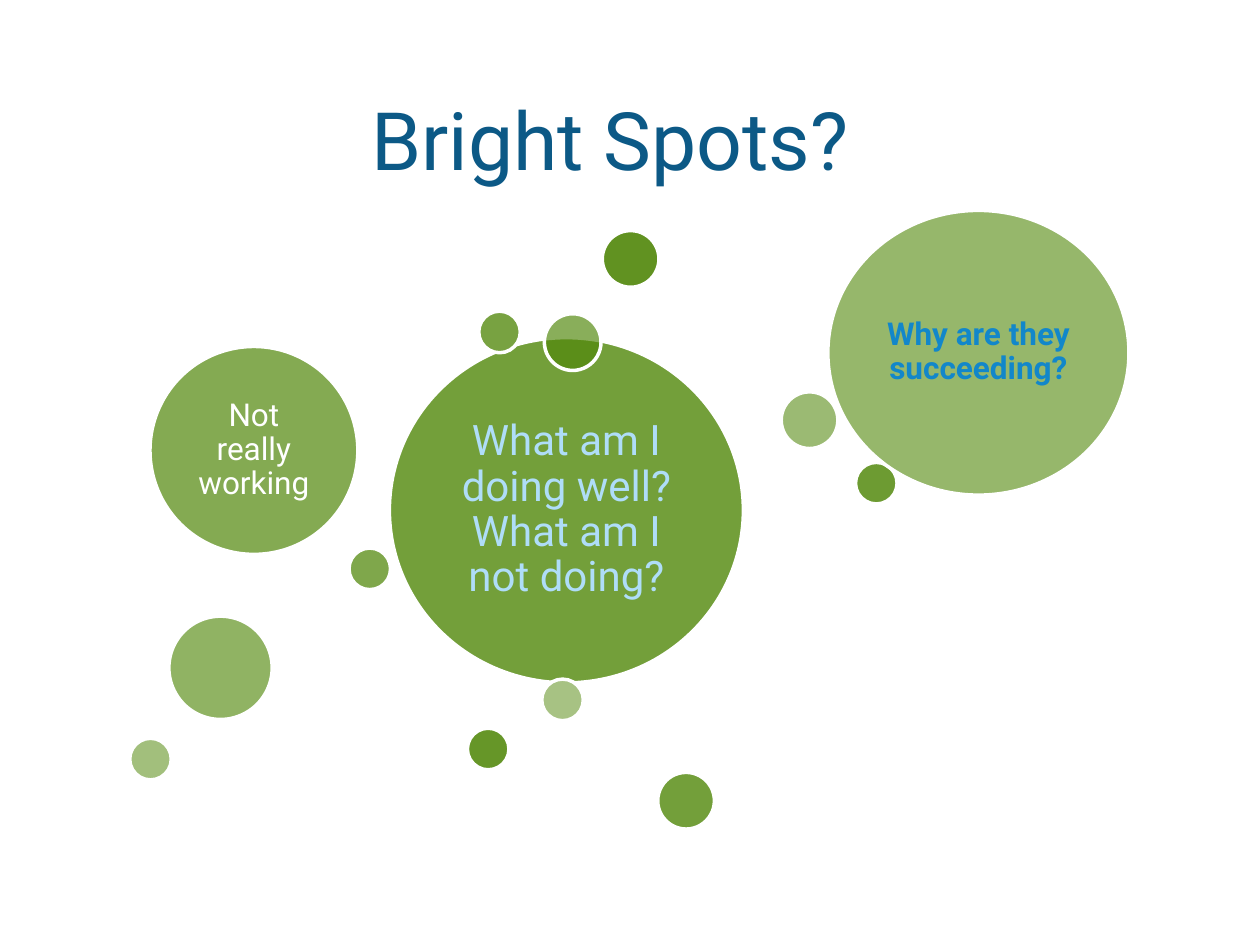
from lxml.etree import SubElement
from pptx import Presentation
from pptx.dml.color import RGBColor
from pptx.enum.shapes import MSO_SHAPE
from pptx.enum.text import MSO_ANCHOR, MSO_AUTO_SIZE, PP_ALIGN
from pptx.oxml.ns import qn
from pptx.util import Inches, Pt

FONT = "Roboto"
GREEN, WHITE = "508709", "FFFFFF"
TITLE_BLUE, PALE_BLUE, BRIGHT_BLUE = "0C5986", "AFDDF8", "1287CA"
SMALL, MEDIUM, LARGE = 0.33, 0.45, 0.82

# Left, top, width, height; opacity falls evenly along the list
BUBBLES = [
    (4.78, 1.83, MEDIUM, MEDIUM),
    (3.71, 5.78, SMALL, SMALL),
    (6.79, 3.67, SMALL, SMALL),
    (5.22, 6.13, MEDIUM, MEDIUM),
    (3.8, 2.47, SMALL, SMALL),
    (2.77, 4.35, SMALL, SMALL),
    (1.19, 2.75, 1.65, 1.65),
    (4.32, 2.49, MEDIUM, MEDIUM),
    (1.34, 4.89, LARGE, LARGE),
    (6.57, 1.67, 2.39, 2.26),
    (6.2, 3.11, MEDIUM, MEDIUM),
    (1.03, 5.86, SMALL, SMALL),
    (4.3, 5.39, SMALL, SMALL),
]
MAX_OPACITY, MIN_OPACITY = 90, 50

# Text and format by bubble index
LABELS = {
    6: dict(text="Not really working", color=WHITE),
    9: dict(text="Why are they succeeding?", color=BRIGHT_BLUE, bold=True),
}


def rgb(color):
    return RGBColor.from_string(color)


def write(shape, text, size=18, color=WHITE, bold=False, inset=0.07,
          right=None, anchor=MSO_ANCHOR.MIDDLE, spacing=0.9):
    tf = shape.text_frame
    tf.word_wrap = True
    tf.auto_size = MSO_AUTO_SIZE.NONE
    tf.vertical_anchor = anchor
    tf.margin_left = tf.margin_top = tf.margin_bottom = Inches(inset)
    tf.margin_right = Inches(inset if right is None else right)
    p = tf.paragraphs[0]
    p.alignment = PP_ALIGN.CENTER
    p.line_spacing = spacing
    r = p.add_run()
    r.text = text
    r.font.name = FONT
    r.font.size = Pt(size)
    r.font.bold = bold
    r.font.color.rgb = rgb(color)


def add_bubble(s, box, opacity):
    sp = s.shapes.add_shape(MSO_SHAPE.OVAL, *map(Inches, box))
    sp.shadow.inherit = False
    sp.fill.solid()
    sp.fill.fore_color.rgb = rgb(GREEN)
    sp.line.color.rgb = rgb(WHITE)
    sp.line.width = Pt(2)
    # Transparency of the fill
    fill = sp.fill._xPr.find(qn("a:solidFill"))
    SubElement(fill[0], qn("a:alpha")).set("val", str(round(opacity * 1000)))
    return sp


def add_title(s, text):
    title = s.shapes.title
    title.left, title.top = Inches(0.6), Inches(0.12)
    title.width, title.height = Inches(8.8), Inches(1.46)
    # The wider right margin sets the title slightly left of centre
    write(title, text, size=46, color=TITLE_BLUE, inset=0.1, right=0.42,
          anchor=MSO_ANCHOR.BOTTOM, spacing=1.0)


def main():
    prs = Presentation()
    prs.slide_width, prs.slide_height = Inches(10), Inches(7.5)
    s = prs.slides.add_slide(prs.slide_layouts[5])
    add_title(s, "Bright Spots?")

    # Central bubble
    centre = add_bubble(s, (3.09, 2.68, 2.81, 2.74), 80)
    write(centre, "What am I doing well? What am I not doing?",
          size=24, color=PALE_BLUE, inset=0.1)

    # Surrounding bubbles
    step = (MAX_OPACITY - MIN_OPACITY) / (len(BUBBLES) - 1)
    for i, box in enumerate(BUBBLES):
        sp = add_bubble(s, box, MAX_OPACITY - i * step)
        if i in LABELS:
            write(sp, **LABELS[i])

    prs.save("out.pptx")


if __name__ == "__main__":
    main()
